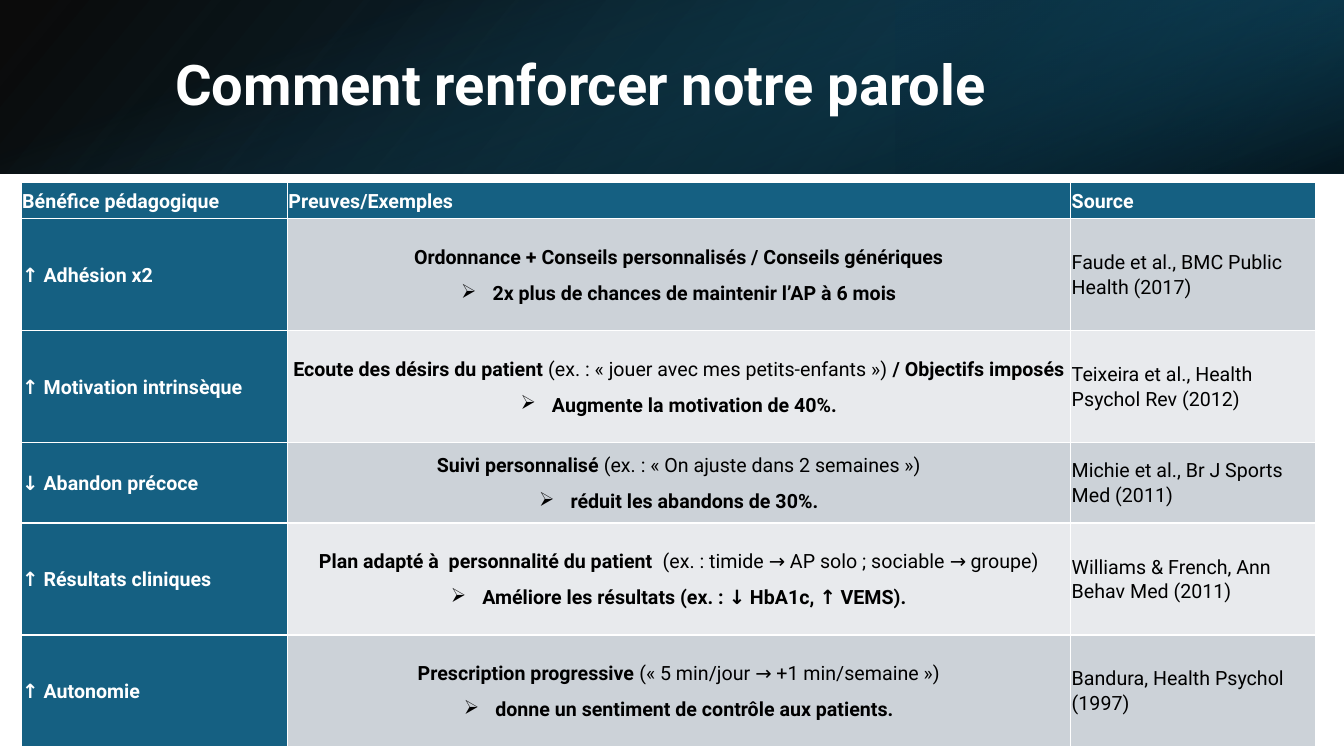
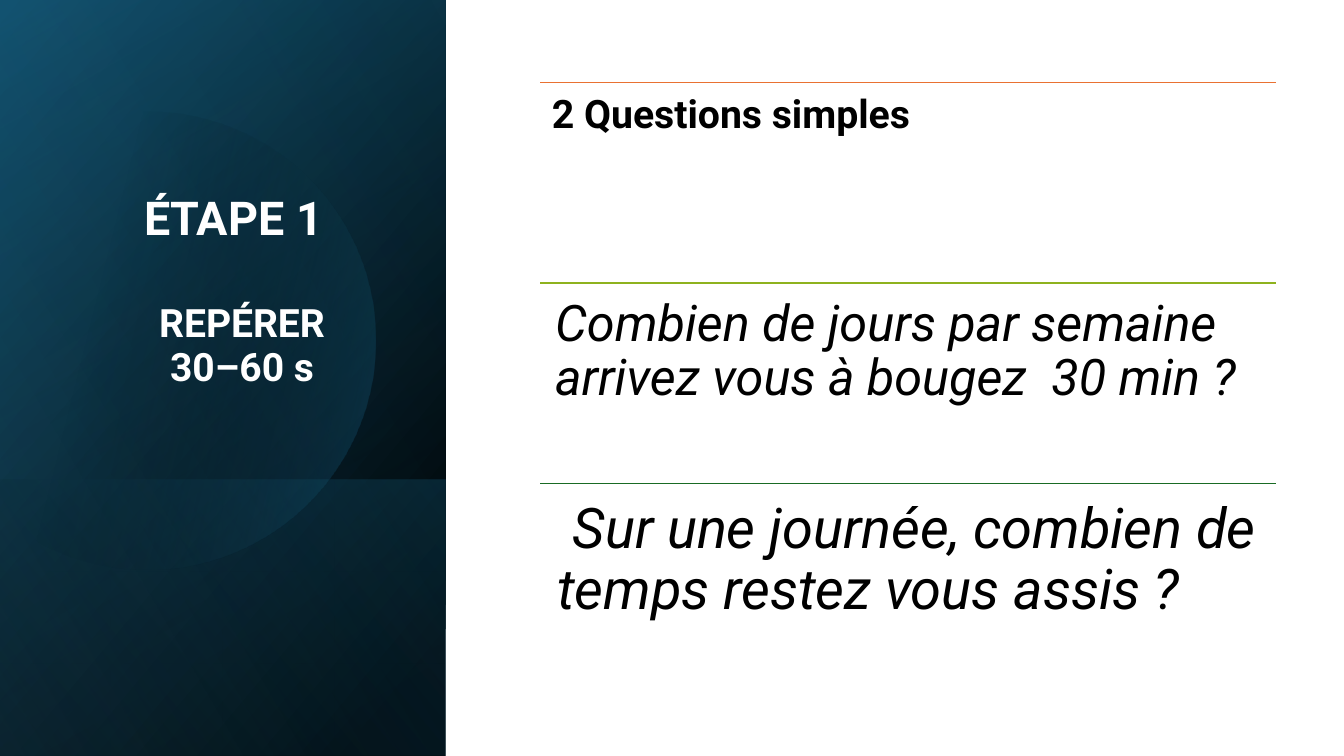
from math import acos, cos, sin

from pptx import Presentation
from pptx.dml.color import RGBColor
from pptx.enum.shapes import MSO_CONNECTOR as Connector, MSO_SHAPE as Shape
from pptx.enum.text import MSO_ANCHOR as Anchor, PP_ALIGN as Align
from pptx.oxml.ns import qn
from pptx.util import Cm, Pt
from lxml.etree import SubElement

FONT = "Roboto"
SLIDE_WIDTH, SLIDE_HEIGHT = 33.87, 19.05
COLORS = {
    "white": "FFFFFF", "black": "000000",
    "teal": "156082", "deep_teal": "104862", "night": "0B3041", "sky": "46B1E1",
    "row_dark": "CCD2D8", "row_light": "E8EAED",
    "orange": "E97132", "lime": "8EB21E", "green": "196B24",
}

HEADERS = ("Bénéfice pédagogique", "Preuves/Exemples", "Source")
COLUMN_WIDTHS = (6.71, 19.74, 6.17)
ROW_HEIGHTS = (0.91, 2.82, 2.82, 2.03, 2.82, 2.82)
# Evidence is a list of segments that alternate between bold and regular.
BENEFITS = (
    ("↑ Adhésion x2",
     ["Ordonnance + Conseils personnalisés / Conseils génériques"],
     "2x plus de chances de maintenir l’AP à 6 mois",
     "Faude et al., BMC Public Health (2017)"),
    ("↑ Motivation intrinsèque",
     ["Ecoute des désirs du patient ",
      "(ex. : « jouer avec mes petits-enfants ») ", "/ Objectifs imposés"],
     "Augmente la motivation de 40%.",
     "Teixeira et al., Health Psychol Rev (2012)"),
    ("↓ Abandon précoce",
     ["Suivi personnalisé ", "(ex. : « On ajuste dans 2 semaines »)"],
     "réduit les abandons de 30%.",
     "Michie et al., Br J Sports Med (2011)"),
    ("↑ Résultats cliniques",
     ["Plan adapté à  personnalité du patient  ",
      "(ex. : timide → AP solo ; sociable → groupe)"],
     "Améliore les résultats (ex. : ↓ HbA1c, ↑ VEMS).",
     "Williams & French, Ann Behav Med (2011)"),
    ("↑ Autonomie",
     ["Prescription progressive ", "(« 5 min/jour → +1 min/semaine »)"],
     "donne un sentiment de contrôle aux patients.",
     "Bandura, Health Psychol (1997)"),
)


def rgb(name):
    return RGBColor.from_string(COLORS[name])


def fill_gradient(shape, angle, *stops):
    """Fill with two (percent, colour, opacity) stops along a clockwise angle."""
    shape.shadow.inherit = False
    shape.line.fill.background()
    shape.fill.gradient()
    shape.fill.gradient_angle = (360 - angle) % 360
    for stop, (position, color, _) in zip(shape.fill.gradient_stops, stops):
        stop.position = position / 100
        stop.color.rgb = rgb(color)
    elements = list(shape.element.iter(qn("a:srgbClr")))
    for element, (_, _, opacity) in zip(elements, stops):
        SubElement(element, qn("a:alpha")).set("val", str(opacity * 1000))


def add_gradient_band(slide, left, top, width, height, angle, *stops):
    band = slide.shapes.add_shape(
        Shape.RECTANGLE, Cm(left), Cm(top), Cm(width), Cm(height))
    fill_gradient(band, angle, *stops)


def add_clipped_disc(slide, center_x, center_y, radius, angle, *stops):
    """Draw the part of a disc that lies right of the slide's left edge."""
    limit = acos(-center_x / radius)
    steps = 120
    turns = [limit * (2 * step / steps - 1) for step in range(steps + 1)]
    points = [(Cm(center_x + radius * cos(turn)), Cm(center_y + radius * sin(turn)))
              for turn in turns]
    builder = slide.shapes.build_freeform(*points[0])
    builder.add_line_segments(points[1:], close=True)
    fill_gradient(builder.convert_to_shape(), angle, *stops)


def format_font(font, size, color, bold=False, italic=False):
    font.name = FONT
    font.size = Pt(size)
    font.color.rgb = rgb(color)
    font.bold = bold
    font.italic = italic


def add_text(slide, left, top, width, height, text, size, color="white", bold=True,
             italic=False, align=Align.LEFT, anchor=Anchor.TOP, inset=0.0,
             first_indent=0.0, spacing=0.9):
    box = slide.shapes.add_textbox(Cm(left), Cm(top), Cm(width), Cm(height))
    frame = box.text_frame
    frame.word_wrap = True
    frame.vertical_anchor = anchor
    frame.margin_left = frame.margin_right = Cm(inset)
    frame.margin_top = frame.margin_bottom = Cm(inset)
    frame.text = text
    for paragraph in frame.paragraphs:
        paragraph.alignment = align
        paragraph.line_spacing = spacing
        if first_indent:
            paragraph._p.get_or_add_pPr().set("indent", str(Cm(first_indent)))
        for run in paragraph.runs:
            format_font(run.font, size, color, bold, italic)


def add_rule(slide, left, top, width, color):
    rule = slide.shapes.add_connector(
        Connector.STRAIGHT, Cm(left), Cm(top), Cm(left + width), Cm(top))
    rule.line.color.rgb = rgb(color)
    rule.line.width = Pt(1)
    SubElement(rule._element.spPr, qn("a:effectLst"))


def add_bullet(paragraph):
    properties = paragraph._p.get_or_add_pPr()
    properties.set("marL", str(Cm(0.79)))
    properties.set("indent", str(-Cm(0.79)))
    SubElement(properties, qn("a:buChar")).set("char", "➢")


def write_paragraph(paragraph, segments, color, bold, align=Align.LEFT):
    """Write segments whose weight alternates, starting with bold or not."""
    paragraph.alignment = align
    paragraph.line_spacing = 1.07
    paragraph.space_after = Pt(8)
    for index, segment in enumerate(segments):
        run = paragraph.add_run()
        run.text = segment
        format_font(run.font, 14, color, bold == (index % 2 == 0))


def prepare_cell(cell, fill):
    cell.fill.solid()
    cell.fill.fore_color.rgb = rgb(fill)
    cell.vertical_anchor = Anchor.MIDDLE
    cell.margin_left = cell.margin_right = Cm(0.03)
    cell.margin_top = cell.margin_bottom = Cm(0.03)
    return cell.text_frame


def add_benefit_table(slide, left, top):
    table = slide.shapes.add_table(
        len(ROW_HEIGHTS), len(COLUMN_WIDTHS), Cm(left), Cm(top),
        Cm(sum(COLUMN_WIDTHS)), Cm(sum(ROW_HEIGHTS))).table
    for column, width in zip(table.columns, COLUMN_WIDTHS):
        column.width = Cm(width)
    for row, height in zip(table.rows, ROW_HEIGHTS):
        row.height = Cm(height)

    for index, header in enumerate(HEADERS):
        frame = prepare_cell(table.cell(0, index), "teal")
        write_paragraph(frame.paragraphs[0], [header], "white", True)

    for row, (benefit, evidence, result, source) in enumerate(BENEFITS, 1):
        fill = "row_dark" if row % 2 else "row_light"
        frame = prepare_cell(table.cell(row, 0), "teal")
        write_paragraph(frame.paragraphs[0], [benefit], "white", True)

        frame = prepare_cell(table.cell(row, 1), fill)
        write_paragraph(frame.paragraphs[0], evidence, "black", True, Align.CENTER)
        paragraph = frame.add_paragraph()
        write_paragraph(paragraph, [result], "black", True, Align.CENTER)
        add_bullet(paragraph)

        frame = prepare_cell(table.cell(row, 2), fill)
        write_paragraph(frame.paragraphs[0], [source], "black", False)


def build_benefits_slide(slide):
    height = 4.37
    third = SLIDE_WIDTH / 3
    add_gradient_band(slide, 0, 0, SLIDE_WIDTH, height, 40,
                      (0, "black", 96), (100, "deep_teal", 100))
    add_gradient_band(slide, 2 * third, 0, third, height, 40,
                      (19, "night", 68), (100, "teal", 79))
    add_gradient_band(slide, 0, 0, SLIDE_WIDTH, height, 70,
                      (23, "teal", 0), (99, "black", 74))
    add_text(slide, 4.42, 0.97, 27.5, 2.44, "Comment renforcer notre parole", 40,
             anchor=Anchor.MIDDLE)
    add_benefit_table(slide, 0.53, 4.6)


def build_step_slide(slide):
    panel = (0, 0, 11.23, SLIDE_HEIGHT)
    add_gradient_band(slide, *panel, 220, (8, "black", 100), (100, "deep_teal", 100))
    add_gradient_band(slide, *panel, 240, (0, "black", 0), (99, "teal", 46))
    add_gradient_band(slide, 0, 12.09, 11.23, 6.96, 140,
                      (2, "teal", 29), (100, "black", 30))
    add_clipped_disc(slide, 3.71, 8.58, 5.76, 14, (29, "black", 0), (100, "teal", 43))
    add_gradient_band(slide, *panel, 150, (0, "black", 0), (99, "sky", 11))

    add_text(slide, 1.89, 4.93, 8, 1.4, "ÉTAPE 1", 33.3, align=Align.CENTER)
    add_text(slide, 2.1, 7.6, 8, 2.4, "REPÉRER\n30–60 s", 27.9,
             align=Align.CENTER, spacing=0.95)

    left, top, width, pitch = 13.61, 2.08, 18.54, 5.05
    questions = (
        ("orange", "2 Questions simples", 28, True, 0.3, 0),
        ("lime", "Combien de jours par semaine arrivez vous à bougez  30 min ?",
         36, False, 0.38, 0),
        ("green", "Sur une journée, combien de temps restez vous assis ?",
         40, False, 0.43, 0.4),
    )
    for index, (color, text, size, bold, inset, indent) in enumerate(questions):
        y = top + index * pitch
        add_rule(slide, left, y, width, color)
        add_text(slide, left, y, width, pitch, text, size, "black", bold,
                 italic=not bold, inset=inset, first_indent=indent)


def main():
    presentation = Presentation()
    presentation.slide_width = Cm(SLIDE_WIDTH)
    presentation.slide_height = Cm(SLIDE_HEIGHT)
    blank = presentation.slide_layouts[6]
    for build in (build_benefits_slide, build_step_slide):
        build(presentation.slides.add_slide(blank))
    presentation.save("out.pptx")


if __name__ == "__main__":
    main()
